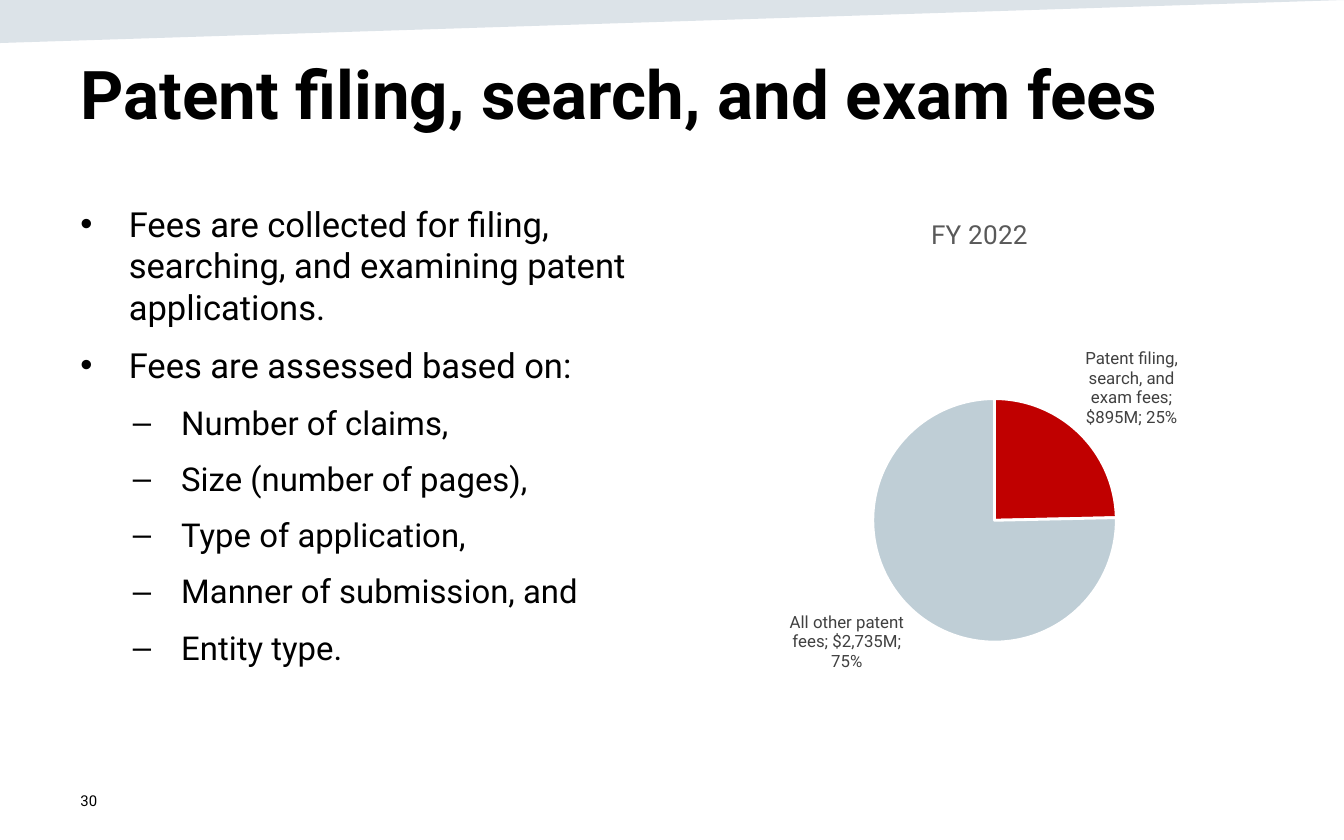
"""Build the slide on patent filing, search and exam fees."""
from dataclasses import dataclass
from typing import Any

from lxml import etree
from pptx import Presentation
from pptx import util as u
from pptx.chart import data
from pptx.dml.color import RGBColor
from pptx.enum import chart as ch
from pptx.enum import text
from pptx.oxml import parse_xml
from pptx.oxml.ns import nsdecls, qn


@dataclass(frozen=True)
class Theme:
    face: str = "Roboto"
    ink: str = "000000"
    white: str = "FFFFFF"
    band: str = "164469"
    head: str = "595959"
    label: str = "404040"
    big: float = 36
    main: float = 18.5
    sub: float = 17.6
    cap: float = 14
    base: float = 10
    tag: float = 9
    foot: float = 8


@dataclass(frozen=True)
class Box:
    left: float
    top: float
    width: float
    height: float

    def lens(self) -> list[u.Length]:
        return [u.Inches(v) for v in (self.left, self.top, self.width, self.height)]


@dataclass(frozen=True)
class Level:
    mark: str
    left: float
    size: float


@dataclass(frozen=True)
class Item:
    words: str
    level: int = 0


@dataclass(frozen=True)
class Slice:
    name: str
    value: int
    color: str


THEME = Theme()
LEVELS = (Level("•", 0.36, THEME.main), Level("–", 0.75, THEME.sub))
HANG = 0.36
ITEMS = (
    Item("Fees are collected for filing, searching, and examining patent applications."),
    Item("Fees are assessed based on:"),
    Item("Number of claims,", 1),
    Item("Size (number of pages),", 1),
    Item("Type of application,", 1),
    Item("Manner of submission, and", 1),
    Item("Entity type.", 1),
)
SLICES = (
    Slice("Patent filing, search, and exam fees", 895, "C00000"),
    Slice("All other patent fees", 2735, "BFCED6"),
)


def apply(obj: Any, vals: dict[str, Any]) -> None:
    for key, val in vals.items():
        setattr(obj, key, val)


def style(font: Any, size: float, color: str = THEME.ink, bold: bool = False) -> None:
    apply(font, {"name": THEME.face, "size": u.Pt(size), "bold": bold})
    font.color.rgb = RGBColor.from_string(color)


def frame(shape: Any, anchor: Any) -> Any:
    apply(shape.text_frame, {
        "word_wrap": True,
        "auto_size": text.MSO_AUTO_SIZE.NONE,
        "vertical_anchor": anchor,
    })
    return shape.text_frame


def line(para: Any, words: str, size: float, bold: bool = False) -> None:
    para.alignment = text.PP_ALIGN.LEFT
    run = para.add_run()
    run.text = words
    style(run.font, size, bold=bold)


def bullet(para: Any, item: Item) -> None:
    level = LEVELS[item.level]
    apply(para, {"level": item.level, "space_before": u.Pt(9)})
    line(para, item.words, level.size)
    props = para._p.get_or_add_pPr()
    props.set("marL", str(u.Inches(level.left)))
    props.set("indent", str(u.Inches(-HANG)))
    etree.SubElement(props, qn("a:buFont")).set("typeface", "Arial")
    etree.SubElement(props, qn("a:buChar")).set("char", level.mark)


def band(slide: Any) -> None:
    form = slide.shapes.build_freeform(scale=1.0)
    form.add_line_segments([(0, u.Inches(0.32)), (u.Inches(10), 0)])
    shape = form.convert_to_shape()
    shape.shadow.inherit = False
    shape.fill.solid()
    shape.fill.fore_color.rgb = RGBColor.from_string(THEME.band)
    shape.line.fill.background()
    tint = shape._element.spPr.find(qn("a:solidFill"))[0]
    etree.SubElement(tint, qn("a:alpha")).set("val", "15000")


def layout(vals: dict[str, float], inner: bool = False) -> Any:
    aim = '<c:layoutTarget val="inner"/>' if inner else ""
    modes = "".join(f'<c:{key}Mode val="edge"/>' for key in ("x", "y"))
    spots = "".join(f'<c:{key} val="{val}"/>' for key, val in vals.items())
    return parse_xml(
        f'<c:layout {nsdecls("c")}><c:manualLayout>{aim}{modes}{spots}'
        "</c:manualLayout></c:layout>"
    )


def place(node: Any, spot: Any) -> None:
    old = node.find(qn("c:layout"))
    if old is not None:
        node.remove(old)
    tx = node.find(qn("c:tx"))
    node.insert(0 if tx is None else 1, spot)


def pie(slide: Any, box: Box) -> None:
    feed = data.CategoryChartData(number_format='"$"#,##0"M"')
    feed.categories = [part.name for part in SLICES]
    feed.add_series("Series 1", [part.value for part in SLICES])
    chart = slide.shapes.add_chart(ch.XL_CHART_TYPE.PIE, *box.lens(), feed).chart
    style(chart.font, THEME.base)
    apply(chart, {"has_legend": False, "has_title": True})
    para = chart.chart_title.text_frame.paragraphs[0]
    run = para.add_run()
    run.text = "FY 2022"
    style(run.font, THEME.cap, THEME.head)
    place(chart.chart_title._element, layout({"x": 0.41, "y": 0.03}))
    area = chart._chartSpace.chart.plotArea
    place(area, layout({"x": 0.32, "y": 0.4, "w": 0.41, "h": 0.49}, True))

    plot = chart.plots[0]
    plot.vary_by_categories = True
    row = plot.series[0]
    for spot, part in enumerate(SLICES):
        form = row.points[spot].format
        form.fill.solid()
        form.fill.fore_color.rgb = RGBColor.from_string(part.color)
        form.line.color.rgb = RGBColor.from_string(THEME.white)
        form.line.width = u.Pt(1.5)
    tags = row.data_labels
    apply(tags, {
        "show_category_name": True,
        "show_value": True,
        "show_percentage": True,
        "position": ch.XL_LABEL_POSITION.OUTSIDE_END,
    })
    style(tags.font, THEME.tag, THEME.label)
    gap = etree.Element(qn("c:separator"))
    gap.text = "; "
    tags._element.find(qn("c:showBubbleSize")).addnext(gap)


def main() -> None:
    deck = Presentation()
    apply(deck, {"slide_width": u.Inches(10), "slide_height": u.Inches(6.25)})
    slide = deck.slides.add_slide(deck.slide_layouts[5])
    band(slide)

    title = slide.shapes.title
    apply(title, dict(zip(("left", "top", "width", "height"), Box(0.5, 0.34, 9, 1.04).lens())))
    head = frame(title, text.MSO_ANCHOR.TOP)
    line(head.paragraphs[0], "Patent filing, search, and exam fees", THEME.big, True)

    body = frame(slide.shapes.add_textbox(*Box(0.5, 1.46, 4.42, 3.74).lens()), text.MSO_ANCHOR.TOP)
    for spot, item in enumerate(ITEMS):
        bullet(body.add_paragraph() if spot else body.paragraphs[0], item)

    pie(slide, Box(5.08, 1.46, 4.42, 3.74))
    foot = frame(slide.shapes.add_textbox(*Box(0.5, 5.79, 2.25, 0.33).lens()), text.MSO_ANCHOR.MIDDLE)
    line(foot.paragraphs[0], "30", THEME.foot)
    deck.save("out.pptx")


if __name__ == "__main__":
    main()
